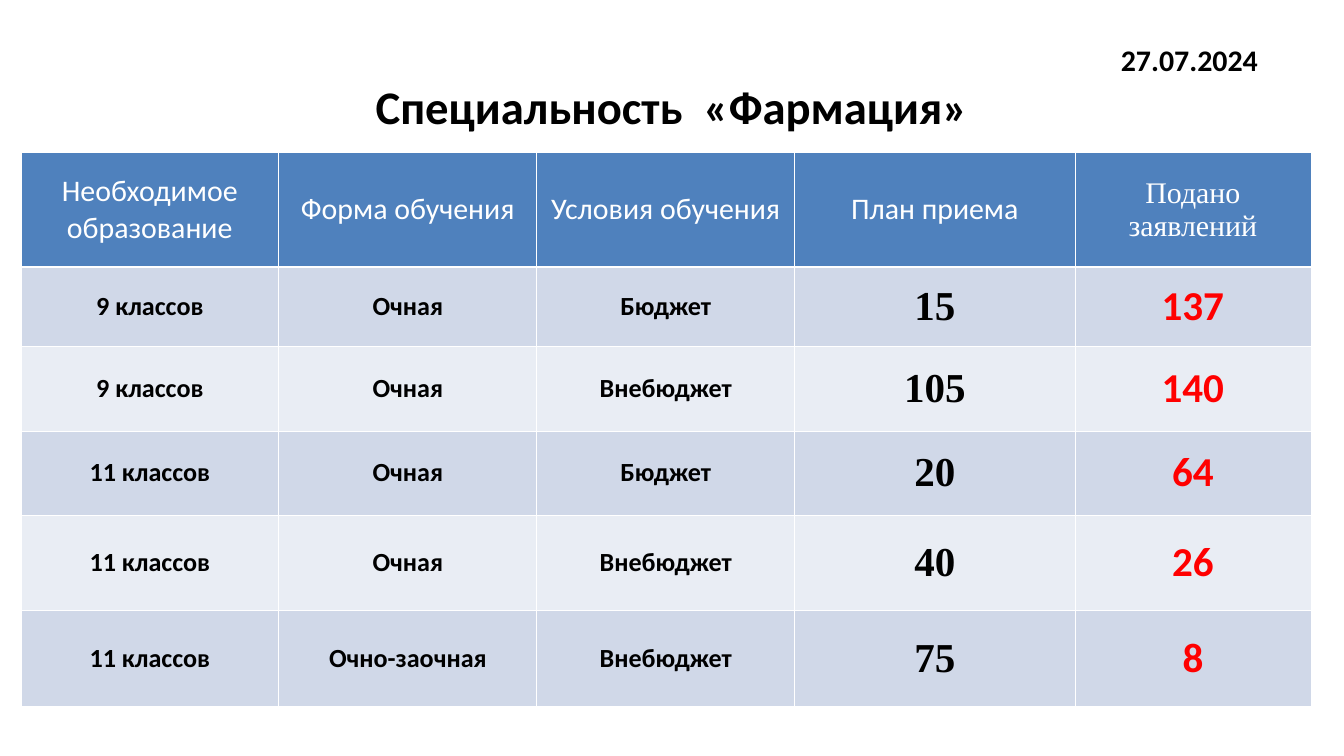
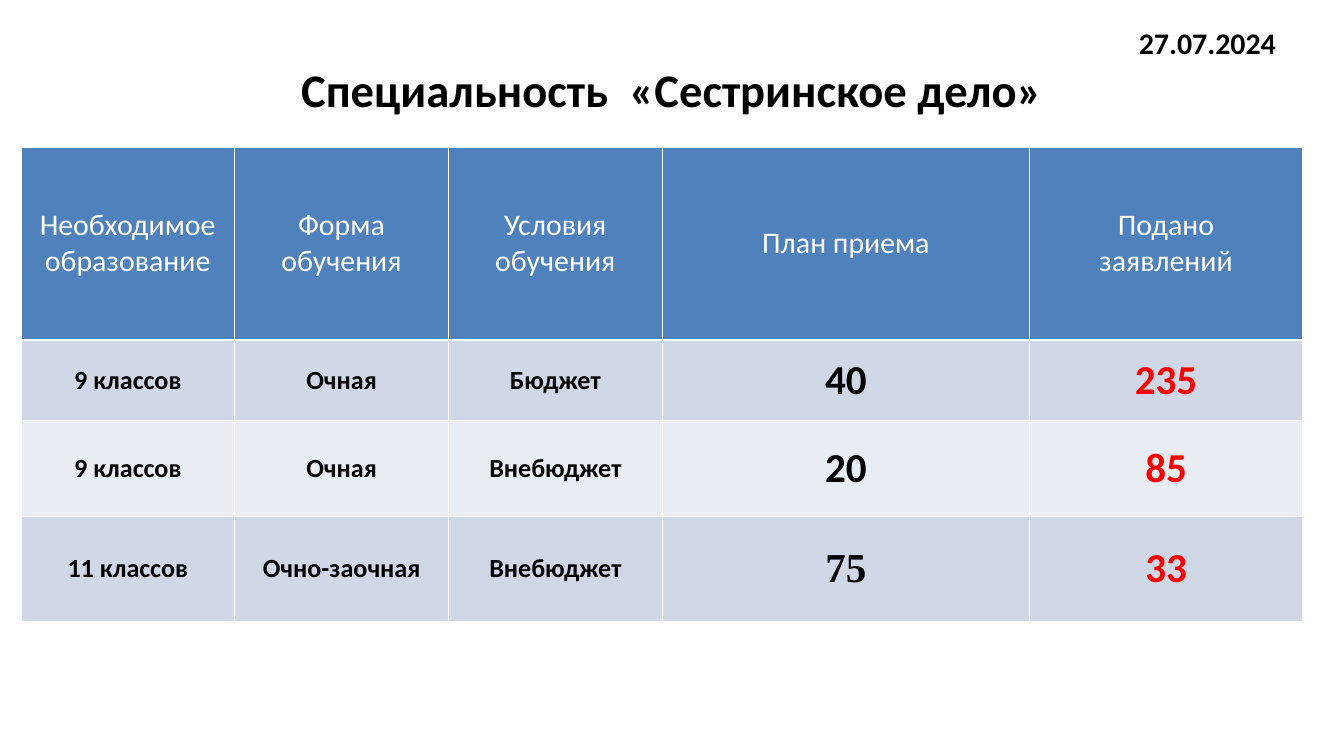
from dataclasses import dataclass
from typing import Any

from lxml.etree import SubElement
from pptx import Presentation
from pptx.dml.color import RGBColor
from pptx.enum.text import MSO_ANCHOR, MSO_AUTO_SIZE, PP_ALIGN
from pptx.oxml.ns import qn
from pptx.util import Cm, Pt

# Shared look
WIDTH, HEIGHT = 50.8, 28.58
WHITE, BLACK, RED = "FFFFFF", "000000", "FF0000"
BLUE, BANDS = "4F81BD", ("D0D8E8", "E9EDF4")
SANS, SERIF = "Calibri", "Times New Roman"
DATE = "27.07.2024"
HEADS = ("Необходимое образование", "Форма обучения", "Условия обучения",
         "План приема")
PLAN, COUNT = 3, 4

# Text formats by role
HEAD = {"size": Pt(32), "bold": False, "name": SANS}
LABEL = {"size": Pt(28), "bold": True, "name": SANS}
FIGURE = {"size": Pt(44), "bold": True, "name": SANS}
STAMP = {"size": Pt(32), "bold": True, "name": SANS}
TITLE = {"size": Pt(50), "bold": True, "name": SANS}


@dataclass(frozen=True)
class Intake:
    """One specialty: its title, table grid in cm and rows of text."""
    title: str
    margin: float
    title_top: float
    top: float
    widths: tuple[float, ...]
    heights: tuple[float, ...]
    last_head: str
    rows: tuple[tuple[str, ...], ...]
    serif: frozenset[tuple[int, int]]


INTAKES = (
    Intake(
        "Специальность  «Фармация»", 2.79, 1.55, 5.77,
        (9.75, 9.75, 9.75, 10.59, 8.92),
        (4.32, 3.02, 3.18, 3.18, 3.61, 3.61),
        "Подано заявлений",
        (("9 классов", "Очная", "Бюджет", "15", "137"),
         ("9 классов", "Очная", "Внебюджет", "105", "140"),
         ("11 классов", "Очная", "Бюджет", "20", "64"),
         ("11 классов", "Очная", "Внебюджет", "40", "26"),
         ("11 классов", "Очно-заочная", "Внебюджет", "75", "8")),
        frozenset({(0, COUNT)} | {(row, PLAN) for row in range(1, 6)}),
    ),
    Intake(
        "Специальность  «Сестринское дело»", 2.11, 0.9, 5.56,
        (8.08, 8.08, 8.08, 13.89, 10.31),
        (7.29, 3.05, 3.61, 3.99),
        "Подано\nзаявлений",
        (("9 классов", "Очная", "Бюджет", "40", "235"),
         ("9 классов", "Очная", "Внебюджет", "20", "85"),
         ("11 классов", "Очно-заочная", "Внебюджет", "75", "33")),
        frozenset({(3, PLAN)}),
    ),
)


def paint(target: Any, color: str) -> None:
    target.rgb = RGBColor.from_string(color)


def assign(target: Any, values: dict[str, Any]) -> None:
    for name, value in values.items():
        setattr(target, name, value)


def write(frame: Any, text: str, style: dict[str, Any], color: str) -> None:
    """Fill a text frame with centred lines in one format."""
    frame.text = text
    for line in frame.paragraphs:
        line.alignment = PP_ALIGN.CENTER
        for run in line.runs:
            assign(run.font, style)
            paint(run.font.color, color)


def border(cell: Any, bottom: float) -> None:
    """Draw white lines round a cell, the lower one at its own weight."""
    props = cell._tc.get_or_add_tcPr()
    for side, points in (("L", 1), ("R", 1), ("T", 1), ("B", bottom)):
        line = SubElement(props, qn(f"a:ln{side}"), w=str(Pt(points)))
        fill = SubElement(line, qn("a:solidFill"))
        SubElement(fill, qn("a:srgbClr"), val=WHITE)


def add_title(slide: Any, intake: Intake) -> None:
    """Put the date at the right, above the centred specialty name."""
    box = slide.shapes.title
    assign(box, {"left": Cm(intake.margin), "top": Cm(intake.title_top),
                 "width": Cm(WIDTH - 2 * intake.margin), "height": Cm(3.53)})
    frame = box.text_frame
    write(frame, f"{DATE}\n{intake.title}", TITLE, BLACK)
    assign(frame, {"auto_size": MSO_AUTO_SIZE.NONE, "word_wrap": True,
                   "vertical_anchor": MSO_ANCHOR.MIDDLE,
                   "margin_left": Cm(0.46), "margin_right": Cm(0.46),
                   "margin_top": 0, "margin_bottom": 0})
    date = frame.paragraphs[0]
    date.alignment = PP_ALIGN.RIGHT
    assign(date.runs[0].font, STAMP)


def add_grid(slide: Any, intake: Intake) -> None:
    """Build the admissions table."""
    rows = (HEADS + (intake.last_head,),) + intake.rows
    table = slide.shapes.add_table(
        len(rows), len(intake.widths), Cm(0.79), Cm(intake.top),
        Cm(sum(intake.widths)), Cm(sum(intake.heights))).table
    for column, width in zip(table.columns, intake.widths):
        column.width = Cm(width)
    for row, height in zip(table.rows, intake.heights):
        row.height = Cm(height)

    for y, texts in enumerate(rows):
        for x, text in enumerate(texts):
            cell = table.cell(y, x)
            if y == 0:
                style, color, back = HEAD, WHITE, BLUE
            else:
                style = FIGURE if x >= PLAN else LABEL
                color = RED if x == COUNT else BLACK
                back = BANDS[(y - 1) % 2]
            if (y, x) in intake.serif:
                style = style | {"name": SERIF}
            write(cell.text_frame, text, style, color)
            assign(cell, {"vertical_anchor": MSO_ANCHOR.MIDDLE,
                          "margin_left": Cm(0.38), "margin_right": Cm(0.38),
                          "margin_top": 0, "margin_bottom": 0})
            border(cell, 3 if y == 0 else 1)
            cell.fill.solid()
            paint(cell.fill.fore_color, back)


def main() -> None:
    deck = Presentation()
    assign(deck, {"slide_width": Cm(WIDTH), "slide_height": Cm(HEIGHT)})
    layout = deck.slide_layouts.get_by_name("Title Only")
    for intake in INTAKES:
        slide = deck.slides.add_slide(layout)
        add_title(slide, intake)
        add_grid(slide, intake)
    deck.save("out.pptx")


if __name__ == "__main__":
    main()
